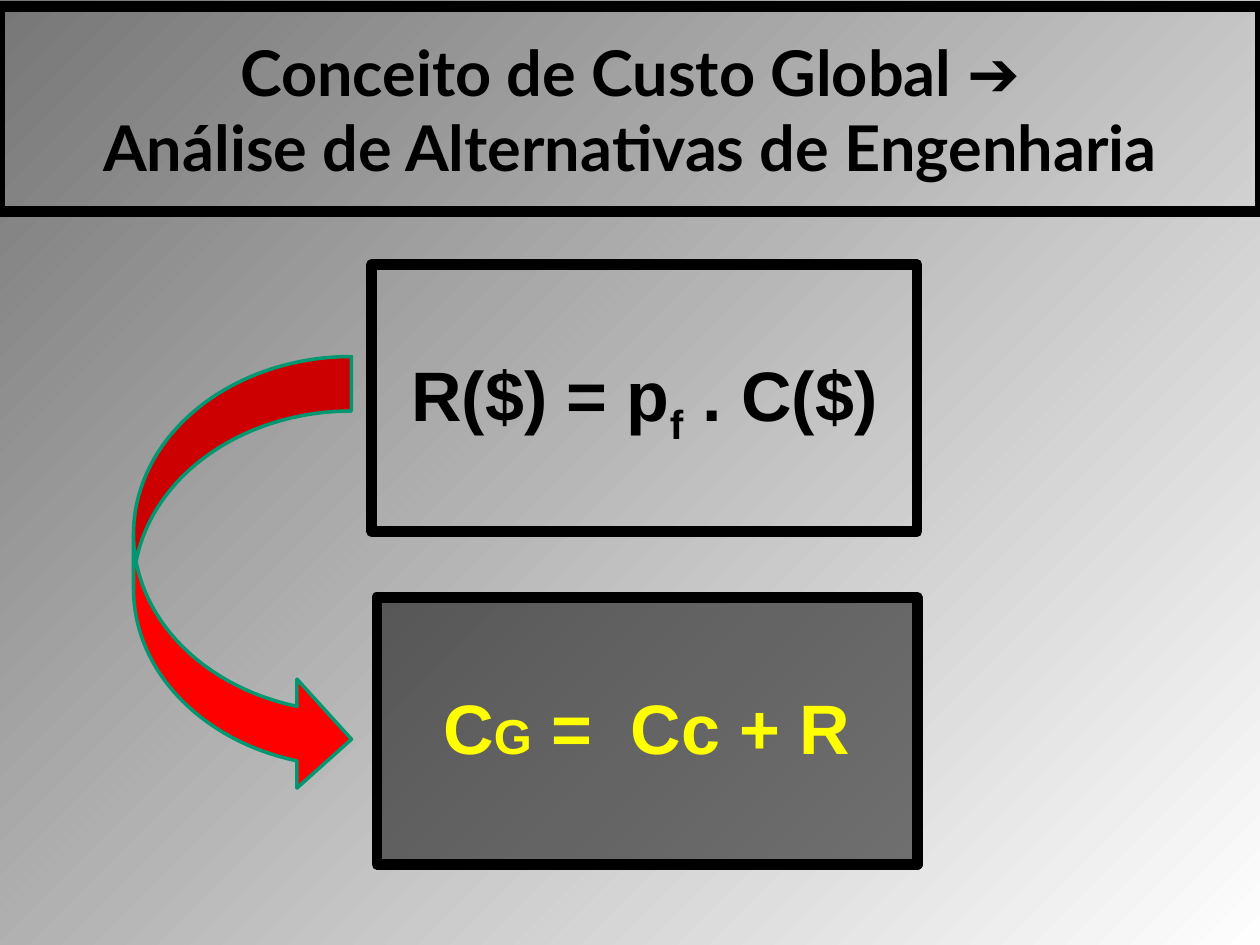
from dataclasses import dataclass
from typing import Optional

from lxml.etree import SubElement
from pptx import Presentation
from pptx.dml.color import RGBColor
from pptx.enum.shapes import MSO_SHAPE as Preset
from pptx.enum.text import MSO_ANCHOR as Anchor, MSO_AUTO_SIZE as AutoSize, PP_ALIGN as Align
from pptx.oxml.ns import qn
from pptx.util import Inches, Pt

BLACK = RGBColor(0x00, 0x00, 0x00)
YELLOW = RGBColor(0xFF, 0xFF, 0x00)
RED = RGBColor(0xFF, 0x00, 0x00)
GREEN = RGBColor(0x00, 0x97, 0x71)
DARK_GREY = RGBColor(0x77, 0x77, 0x77)
NEAR_WHITE = RGBColor(0xFE, 0xFE, 0xFE)


@dataclass
class Term:
    text: str
    size: int = 40
    subscript: bool = False


@dataclass
class Formula:
    left: float
    top: float
    width: float
    terms: list[Term]
    color: RGBColor
    opacity: Optional[int] = None  # percent of black; None leaves the box open


FORMULAS = [
    Formula(2.95, 2.1, 4.33,
            [Term("R($) = p"), Term("f", subscript=True), Term(" . C($)")], BLACK),
    Formula(2.99, 4.74, 4.29,
            [Term("C"), Term("G", size=28), Term(" =  Cc + R")], YELLOW, opacity=51),
]


def set_outline(shape, color: RGBColor, width: float) -> None:
    shape.line.color.rgb = color
    shape.line.width = Pt(width)


def set_font(font, name: str, size: int, color: RGBColor) -> None:
    font.name, font.size, font.bold = name, Pt(size), True
    font.color.rgb = color


def draw_formula(slide, formula: Formula) -> None:
    box = slide.shapes.add_shape(Preset.RECTANGLE, Inches(formula.left), Inches(formula.top),
                                 Inches(formula.width), Inches(2.12))
    box.shadow.inherit = False
    set_outline(box, BLACK, 6)
    if formula.opacity is None:
        box.fill.background()
    else:
        box.fill.solid()
        box.fill.fore_color.rgb = BLACK
        shade = box._element.spPr.find(qn("a:solidFill")).find(qn("a:srgbClr"))
        SubElement(shade, qn("a:alpha"), val=str(formula.opacity * 1000))

    # The formula stands one line below the top of its box
    frame = box.text_frame
    frame.vertical_anchor = Anchor.TOP
    frame.margin_top = Inches(0.69)
    line = frame.paragraphs[0]
    line.alignment = Align.CENTER
    for term in formula.terms:
        run = line.add_run()
        run.text = term.text
        set_font(run.font, "Arial", term.size, formula.color)
        if term.subscript:
            run._r.get_or_add_rPr().set("baseline", "-25000")


def draw_title(slide) -> None:
    title = slide.shapes.title
    title.left, title.top = Inches(0), Inches(0.05)
    title.width, title.height = Inches(10), Inches(1.63)
    set_outline(title, BLACK, 6)
    frame = title.text_frame
    frame.text = "Conceito de Custo Global ➔\nAnálise de Alternativas de Engenharia"
    frame.auto_size = AutoSize.NONE
    frame.vertical_anchor = Anchor.MIDDLE
    for line in frame.paragraphs:
        line.alignment = Align.CENTER
        for run in line.runs:
            set_font(run.font, "Lato", 36, BLACK)


def draw_arrow(slide) -> None:
    arrow = slide.shapes.add_shape(Preset.CURVED_RIGHT_ARROW, Inches(1.06), Inches(2.83),
                                   Inches(1.73), Inches(3.47))
    arrow.shadow.inherit = False
    arrow.fill.solid()
    arrow.fill.fore_color.rgb = RED
    set_outline(arrow, GREEN, 2)


def main() -> None:
    deck = Presentation()
    deck.slide_width, deck.slide_height = Inches(10), Inches(7.5)
    slide = deck.slides.add_slide(deck.slide_layouts[5])

    # Background runs from dark top left to light bottom right
    backdrop = slide.background.fill
    backdrop.gradient()
    backdrop.gradient_angle = 315
    for stop, color in zip(backdrop.gradient_stops, (DARK_GREY, NEAR_WHITE)):
        stop.color.rgb = color

    draw_title(slide)
    for formula in FORMULAS:
        draw_formula(slide, formula)
    draw_arrow(slide)
    deck.save("out.pptx")


if __name__ == "__main__":
    main()
